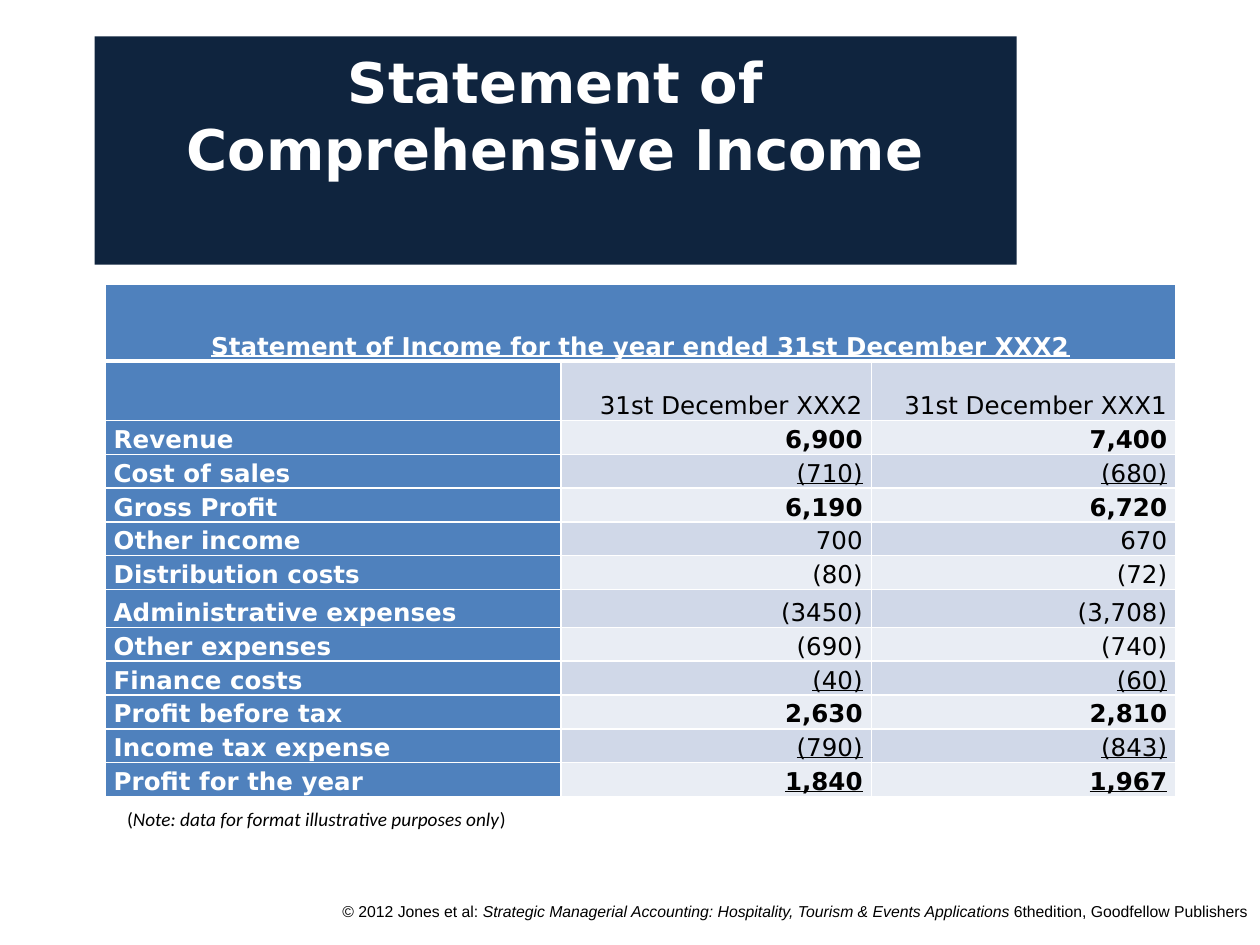
"""Build the Statement of Comprehensive Income slide."""
from lxml.etree import SubElement
from pptx import Presentation
from pptx.dml.color import RGBColor
from pptx.enum.text import MSO_ANCHOR, PP_ALIGN
from pptx.oxml.ns import qn
from pptx.util import Pt

NAVY = RGBColor(0x0F, 0x24, 0x3E)
BLUE = RGBColor(0x4F, 0x81, 0xBD)
BANDS = [RGBColor(0xE9, 0xED, 0xF4), RGBColor(0xD0, 0xD8, 0xE8)]
WHITE = RGBColor(0xFF, 0xFF, 0xFF)
BLACK = RGBColor(0, 0, 0)

TITLE = "Statement of Comprehensive Income"
CAPTION = "Statement of Income for the year ended 31st December XXX2"
LINES = [
    ("", "31st December XXX2", "31st December XXX1", ""),
    ("Revenue", "6,900", "7,400", "b"),
    ("Cost of sales", "(710)", "(680)", "u"),
    ("Gross Profit", "6,190", "6,720", "b"),
    ("Other income", "700", "670", ""),
    ("Distribution costs", "(80)", "(72)", ""),
    ("Administrative expenses", "(3450)", "(3,708)", ""),
    ("Other expenses", "(690)", "(740)", ""),
    ("Finance costs", "(40)", "(60)", "u"),
    ("Profit before tax", "2,630", "2,810", "b"),
    ("Income tax expense", "(790)", "(843)", "u"),
    ("Profit for the year", "1,840", "1,967", "bu"),
]
NOTE = [("(", False), ("Note: data for format illustrative purposes only", True), (")", False)]
COPYRIGHT = [
    ("© 2012 Jones et al: ", False),
    ("Strategic Managerial Accounting: Hospitality, Tourism & Events Applications ", True),
    ("6thedition, Goodfellow Publishers", False),
]
COLUMN_WIDTHS = [260.5, 177.5, 174]
ROW_HEIGHTS = [43.75, 34] + [17.3] * 5 + [21.6] + [17.3] * 5


def add_run(paragraph, text, face, size, color, bold=False, italic=False, underline=False):
    run = paragraph.add_run()
    run.text = text
    font = run.font
    font.name, font.size = face, Pt(size)
    font.color.rgb = color
    font.bold, font.italic, font.underline = bold, italic, underline


def add_caption(slide, place, pieces, face, size, align):
    frame = slide.shapes.add_textbox(*map(Pt, place)).text_frame
    frame.word_wrap = True
    paragraph = frame.paragraphs[0]
    paragraph.alignment = align
    for text, italic in pieces:
        add_run(paragraph, text, face, size, BLACK, italic=italic)


def format_cell(cell, fill, bottom=1):
    properties = cell._tc.get_or_add_tcPr()
    for side, width in (("L", 1), ("R", 1), ("T", 1), ("B", bottom)):
        line = SubElement(properties, qn(f"a:ln{side}"), w=str(Pt(width)))
        color = SubElement(SubElement(line, qn("a:solidFill")), qn("a:srgbClr"))
        color.set("val", str(WHITE))
    cell.fill.solid()
    cell.fill.fore_color.rgb = fill
    cell.vertical_anchor = MSO_ANCHOR.BOTTOM
    cell.margin_left = cell.margin_right = Pt(5)
    cell.margin_top = cell.margin_bottom = 0


def write_cell(cell, text, align, color, bold, underline=False):
    paragraph = cell.text_frame.paragraphs[0]
    paragraph.alignment = align
    paragraph.line_spacing = 1.15
    add_run(paragraph, text, "DejaVu Sans", 14, color, bold, underline=underline)


def add_statement(slide):
    frame = slide.shapes.add_table(len(ROW_HEIGHTS), len(COLUMN_WIDTHS), Pt(60), Pt(162.5),
                                   Pt(sum(COLUMN_WIDTHS)), Pt(sum(ROW_HEIGHTS)))
    statement = frame.table
    for column, width in zip(statement.columns, COLUMN_WIDTHS):
        column.width = Pt(width)
    for row, height in zip(statement.rows, ROW_HEIGHTS):
        row.height = Pt(height)

    heading = statement.cell(0, 0)
    heading.merge(statement.cell(0, 2))
    for cell in statement.rows[0].cells:
        format_cell(cell, BLUE, bottom=3)
    write_cell(heading, CAPTION, PP_ALIGN.CENTER, WHITE, True, True)

    for row, (label, *amounts, style) in enumerate(LINES, start=1):
        label_cell = statement.cell(row, 0)
        format_cell(label_cell, BLUE)
        if label:
            write_cell(label_cell, label, PP_ALIGN.LEFT, WHITE, True)
        for column, amount in enumerate(amounts, start=1):
            cell = statement.cell(row, column)
            format_cell(cell, BANDS[row % 2])
            write_cell(cell, amount, PP_ALIGN.RIGHT, BLACK, "b" in style, "u" in style)


def add_title(slide):
    title = slide.shapes.title
    title.left, title.top, title.width, title.height = map(Pt, (54, 20.75, 527, 130.5))
    title.fill.solid()
    title.fill.fore_color.rgb = NAVY
    frame = title.text_frame
    frame.word_wrap = True
    frame.vertical_anchor = MSO_ANCHOR.TOP
    frame.margin_top = Pt(6.5)
    paragraph = frame.paragraphs[0]
    paragraph.alignment = PP_ALIGN.CENTER
    paragraph.line_spacing = 1.0
    add_run(paragraph, TITLE, "DejaVu Sans", 32, WHITE, bold=True)


def main():
    deck = Presentation()
    deck.slide_width, deck.slide_height = Pt(720), Pt(540)
    slide = deck.slides.add_slide(deck.slide_layouts[0])
    subtitle = slide.placeholders[1].element
    subtitle.getparent().remove(subtitle)
    add_caption(slide, (160.5, 512, 559.5, 28), COPYRIGHT, "Arial", 9, PP_ALIGN.RIGHT)
    add_title(slide)
    add_statement(slide)
    add_caption(slide, (65.5, 458, 250, 21), NOTE, "Calibri", 11, PP_ALIGN.LEFT)
    deck.save("out.pptx")


if __name__ == "__main__":
    main()
